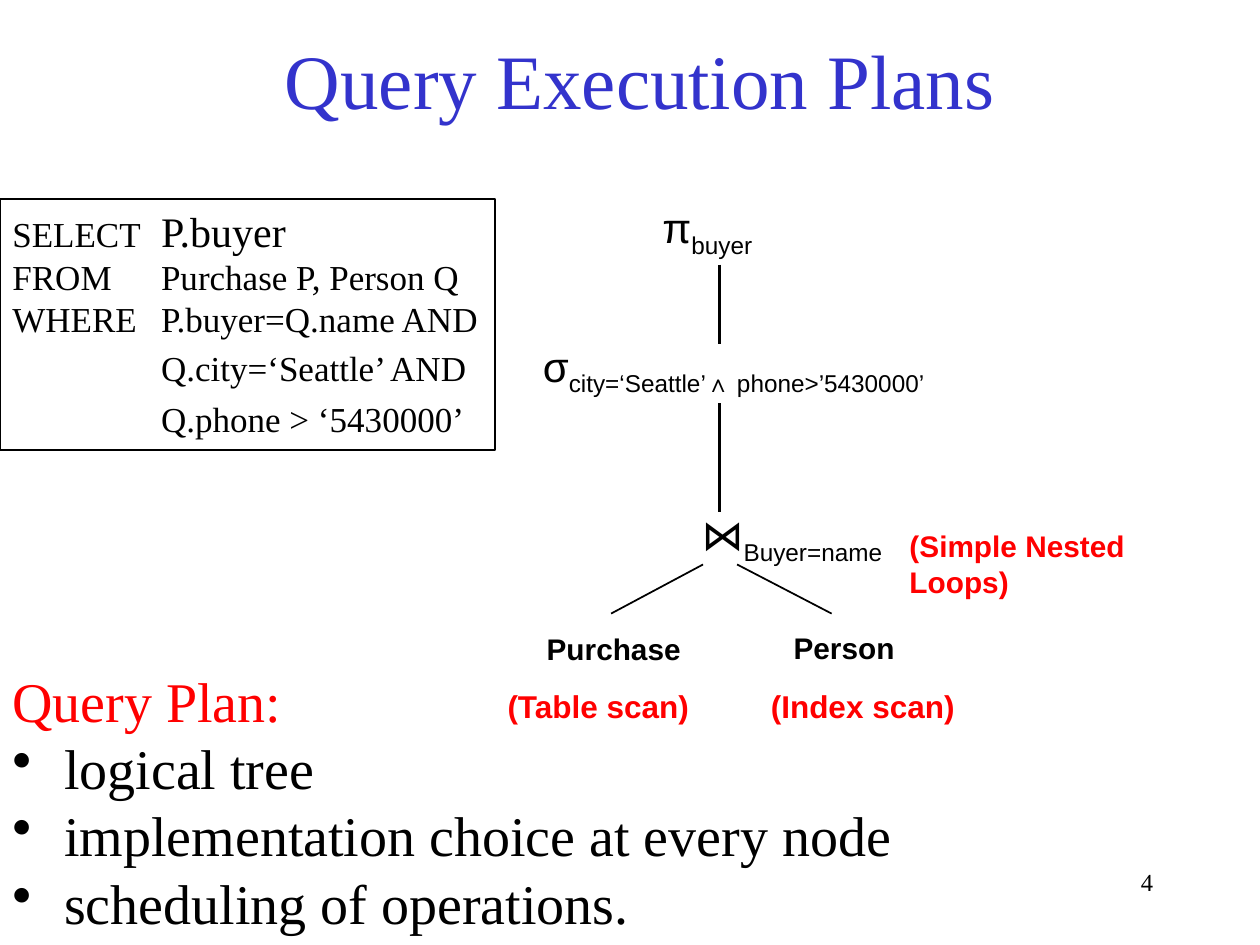
from pptx import Presentation
from pptx.util import Inches, Pt
from pptx.dml.color import RGBColor
from pptx.enum.shapes import MSO_CONNECTOR, MSO_SHAPE
from pptx.enum.text import MSO_ANCHOR, MSO_AUTO_SIZE, PP_ALIGN
from lxml.etree import SubElement
from pptx.oxml.ns import qn

BLACK = RGBColor(0, 0, 0)
RED = RGBColor(255, 0, 0)
BLUE = RGBColor(0x33, 0x33, 0xCC)
SERIF, SANS = "Times New Roman", "Arial"

deck = Presentation()
deck.slide_width, deck.slide_height = Inches(10), Inches(7.5)
col, row = deck.slide_width / 100, deck.slide_height / 75
slide = deck.slides.add_slide(deck.slide_layouts[5])
shapes = slide.shapes


def place(x, y, wide, high):
    return int(x * col), int(y * row), int(wide * col), int(high * row)


def style(run, size, face, color, bold=False):
    font = run.font
    font.size, font.name, font.bold = Pt(size), face, bold
    font.color.rgb = color


title = shapes.title
title.left, title.top, title.width, title.height = place(8.3, 0, 85, 12.5)
frame = title.text_frame
frame.text = "Query Execution Plans"
frame.vertical_anchor = MSO_ANCHOR.MIDDLE
frame.paragraphs[0].alignment = PP_ALIGN.CENTER
style(frame.paragraphs[0].runs[0], 44, SERIF, BLUE)

lines = [
    (48.5, 48.7, 55.8, 44.8, 1),
    (58.5, 44.8, 66, 48.7, 1),
    (57.1, 21, 57.1, 27.3, 1.5),
    (57.1, 32, 57.1, 40.6, 1.5),
]
for x, y, right, low, thick in lines:
    edge = shapes.add_connector(
        MSO_CONNECTOR.STRAIGHT, *place(x, y, right, low))
    edge.line.color.rgb = BLACK
    edge.line.width = Pt(thick)
    SubElement(edge.element.spPr, qn("a:effectLst"))

labels = [
    ("Purchase", 42.4, 49.6, 12.7, 3.8, 17, BLACK),
    ("Person", 62, 49.5, 10, 3.8, 17, BLACK),
    ("(Simple Nested Loops)", 71.2, 41.4, 27.6, 3.8, 17, RED),
    ("(Table scan)", 39.3, 54, 16.6, 4, 18, RED),
    ("(Index scan)", 60.2, 54, 16.6, 4, 18, RED),
]
for text, x, y, wide, high, size, color in labels:
    frame = shapes.add_textbox(*place(x, y, wide, high)).text_frame
    frame.text = text
    frame.word_wrap = False
    frame.auto_size = MSO_AUTO_SIZE.SHAPE_TO_FIT_TEXT
    style(frame.paragraphs[0].runs[0], size, SANS, color, True)

nodes = [
    ("⋈", "Buyer=name", 54.7, 39.9, 17.6, False),
    ("σ", "city=‘Seattle’∧ phone>’5430000’", 42.1, 26.5, 36.2, True),
    ("π", "buyer", 51.6, 15.5, 10, False),
]
for sign, sub, x, y, wide, wrap in nodes:
    frame = shapes.add_textbox(*place(x, y, wide, 5.1)).text_frame
    frame.word_wrap = wrap
    frame.auto_size = MSO_AUTO_SIZE.SHAPE_TO_FIT_TEXT
    para = frame.paragraphs[0]
    for text in (sign, sub):
        run = para.add_run()
        run.text = text
        style(run, 24, SANS, BLACK)
    run.font._element.set("baseline", "-25000")

query = shapes.add_shape(MSO_SHAPE.RECTANGLE, *place(0, 15.8, 39.3, 19.9))
query.shadow.inherit = False
query.fill.background()
query.line.color.rgb = BLACK
query.line.width = Pt(1)
frame = query.text_frame
frame.word_wrap = False
frame.auto_size = MSO_AUTO_SIZE.SHAPE_TO_FIT_TEXT
frame.vertical_anchor = MSO_ANCHOR.TOP
clauses = [
    [("SELECT", 20), ("\tP.buyer", 24)],
    [("FROM\tPurchase P, Person Q", 20)],
    [("WHERE\tP.buyer=Q.name AND", 20), ("\v", 20),
     ("\t", 24), ("Q.city=‘Seattle’ AND", 20), ("\v", 20),
     ("\t", 24), ("Q.phone > ‘5430000’", 20)],
]
for spot, parts in enumerate(clauses):
    para = frame.add_paragraph() if spot else frame.paragraphs[0]
    para.alignment = PP_ALIGN.LEFT
    tabs = SubElement(para._p.get_or_add_pPr(), qn("a:tabLst"))
    SubElement(tabs, qn("a:tab"), pos=str(int(11.8 * col)), algn="l")
    for text, size in parts:
        if text == "\v":
            para.add_line_break()
            continue
        run = para.add_run()
        run.text = text
        style(run, size, SERIF, BLACK)

frame = shapes.add_textbox(*place(0, 52.4, 78.3, 22.6)).text_frame
frame.word_wrap = True
frame.auto_size = MSO_AUTO_SIZE.SHAPE_TO_FIT_TEXT
frame.text = "\n".join([
    "Query Plan:",
    " logical tree",
    " implementation choice at every node",
    " scheduling of operations.",
])
for spot, para in enumerate(frame.paragraphs):
    props = para._p.get_or_add_pPr()
    props.set("marL", str(int(3 * col)))
    props.set("indent", str(int(-3 * col)))
    if spot:
        SubElement(props, qn("a:buChar"), char="•")
    style(para.runs[0], 32, SERIF, BLACK if spot else RED)

frame = shapes.add_textbox(*place(71.7, 68.3, 20.8, 5)).text_frame
frame.word_wrap = True
frame.text = "4"
frame.paragraphs[0].alignment = PP_ALIGN.RIGHT
style(frame.paragraphs[0].runs[0], 14, SERIF, BLACK)

deck.save("out.pptx")
